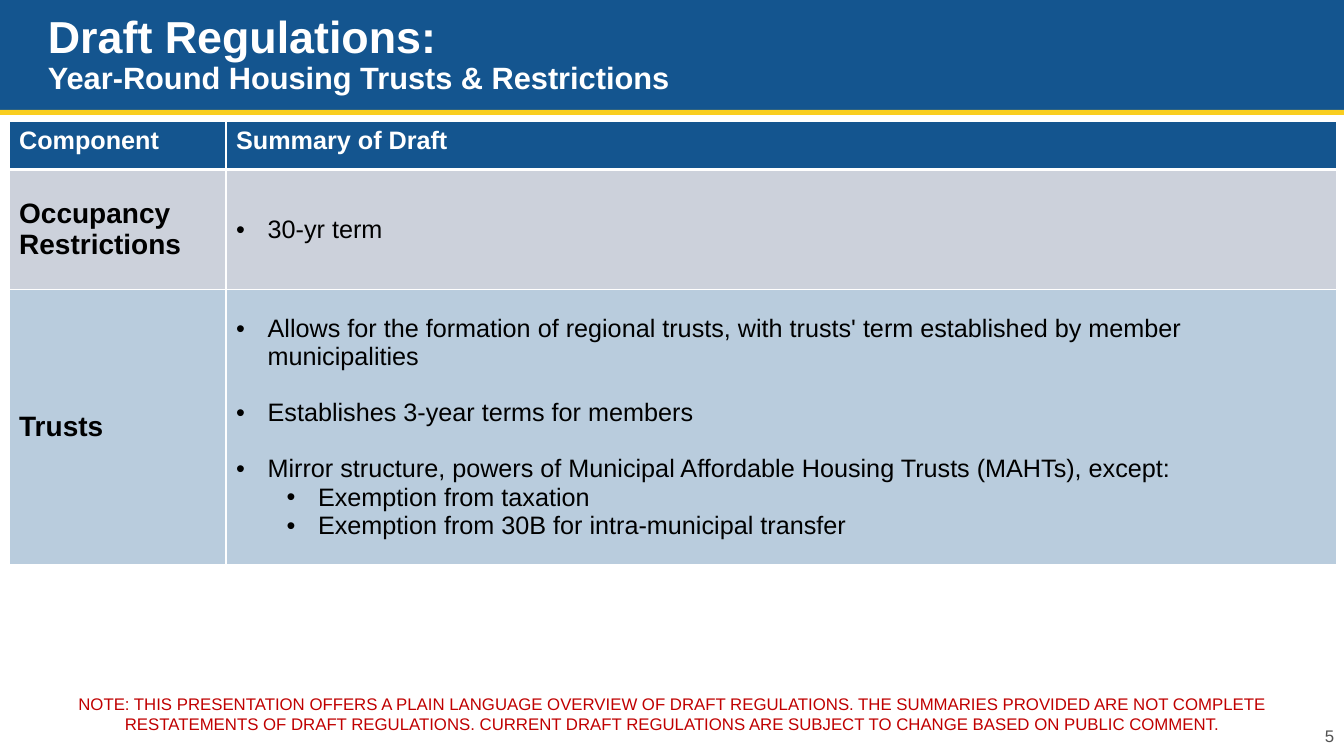
from lxml import etree
from pptx import Presentation
from pptx.dml.color import RGBColor
from pptx.enum.shapes import MSO_SHAPE as Shape
from pptx.enum.text import MSO_ANCHOR as Anchor, PP_ALIGN as Align
from pptx.oxml.ns import qn
from pptx.util import Pt

BLUE = RGBColor(0x14, 0x55, 0x8F)
YELLOW = RGBColor(0xF9, 0xCE, 0x20)
WHITE = RGBColor(0xFF, 0xFF, 0xFF)
BLACK = RGBColor(0x00, 0x00, 0x00)
GREY = RGBColor(0x53, 0x53, 0x53)
RED = RGBColor(0xC0, 0x00, 0x00)
PALE_GREY = RGBColor(0xCC, 0xD1, 0xDB)
PALE_BLUE = RGBColor(0xB9, 0xCC, 0xDD)

WIDTH, HEIGHT = 960, 540
BAND_HEIGHT = 79
COLUMN_WIDTHS = (155, 793)
ROW_HEIGHTS = (34, 86, 196)
HEADINGS = ("Component", "Summary of Draft")

# Each summary line: text, level, space before
COMPONENTS = [
    ("Occupancy Restrictions", PALE_GREY, [("30-yr term", 0, 0)]),
    ("Trusts", PALE_BLUE, [
        ("Allows for the formation of regional trusts, with trusts' term "
         "established by member municipalities", 0, 0),
        ("Establishes 3-year terms for members", 0, 20),
        ("Mirror structure, powers of Municipal Affordable Housing Trusts "
         "(MAHTs), except:", 0, 20),
        ("Exemption from taxation", 1, 0),
        ("Exemption from 30B for intra-municipal transfer", 1, 0),
    ]),
]
NOTE = ("NOTE: THIS PRESENTATION OFFERS A PLAIN LANGUAGE OVERVIEW OF DRAFT "
        "REGULATIONS. THE SUMMARIES PROVIDED ARE NOT COMPLETE RESTATEMENTS OF "
        "DRAFT REGULATIONS. CURRENT DRAFT REGULATIONS ARE SUBJECT TO CHANGE "
        "BASED ON PUBLIC COMMENT.")


class SlideBuilder:
    """Holds the slide and its shared style."""

    font_name = "Arial"
    bullet_indent = 22.5
    level_indent = 36

    def __init__(self, slide):
        self.slide = slide

    def style(self, font, size, color, bold=False):
        font.name = self.font_name
        font.size = Pt(size)
        font.bold = bold
        font.color.rgb = color

    def band(self, top, height, color):
        band = self.slide.shapes.add_shape(
            Shape.RECTANGLE, 0, Pt(top), Pt(WIDTH), Pt(height))
        band.shadow.inherit = False
        band.fill.solid()
        band.fill.fore_color.rgb = color
        band.line.fill.background()

    def title(self, heading, subheading, left, width):
        title = self.slide.shapes.title
        title.left, title.top = Pt(left), Pt(0)
        title.width, title.height = Pt(width), Pt(BAND_HEIGHT)
        # Bring the title in front of the bands
        self.slide.shapes._spTree.append(title._element)
        frame = title.text_frame
        frame.vertical_anchor = Anchor.MIDDLE
        frame.text = f"{heading}\v{subheading}"
        paragraph = frame.paragraphs[0]
        paragraph.alignment = Align.LEFT
        paragraph.line_spacing = 0.9
        for run, size in zip(paragraph.runs, (32, 22)):
            self.style(run.font, size, WHITE, bold=True)

    def text(self, content, left, top, width, height, color, align):
        box = self.slide.shapes.add_textbox(
            Pt(left), Pt(top), Pt(width), Pt(height))
        frame = box.text_frame
        frame.word_wrap = True
        frame.vertical_anchor = Anchor.MIDDLE
        frame.text = content
        paragraph = frame.paragraphs[0]
        paragraph.alignment = align
        self.style(paragraph.runs[0].font, 12, color)

    def table(self, left, top, widths, heights):
        table = self.slide.shapes.add_table(
            len(heights), len(widths), Pt(left), Pt(top),
            Pt(sum(widths)), Pt(sum(heights))).table
        for column, width in zip(table.columns, widths):
            column.width = Pt(width)
        for row, height in zip(table.rows, heights):
            row.height = Pt(height)
        return table

    def cell(self, cell, lines, fill, size, color=BLACK, bold=False,
             anchor=Anchor.MIDDLE, bulleted=False, top_line=1, bottom_line=1):
        for side, line in (("L", 1), ("R", 1), ("T", top_line), ("B", bottom_line)):
            self.border(cell, side, line)
        cell.fill.solid()
        cell.fill.fore_color.rgb = fill
        cell.vertical_anchor = anchor
        frame = cell.text_frame
        frame.text = "\n".join(content for content, _, _ in lines)
        for paragraph, (_, level, gap) in zip(frame.paragraphs, lines):
            if bulleted:
                self.bullet(paragraph, level)
            if gap:
                paragraph.space_before = Pt(gap)
            self.style(paragraph.runs[0].font, size, color, bold)

    def border(self, cell, side, width):
        line = etree.SubElement(
            cell._tc.get_or_add_tcPr(), qn(f"a:ln{side}"), w=str(Pt(width)))
        fill = etree.SubElement(line, qn("a:solidFill"))
        etree.SubElement(fill, qn("a:srgbClr"), val=str(WHITE))

    def bullet(self, paragraph, level):
        paragraph.level = level
        properties = paragraph._p.get_or_add_pPr()
        margin = self.bullet_indent + level * self.level_indent
        properties.set("marL", str(Pt(margin)))
        properties.set("indent", str(Pt(-self.bullet_indent)))
        etree.SubElement(properties, qn("a:buFont"), typeface=self.font_name)
        etree.SubElement(properties, qn("a:buChar"), char="•")


def main():
    deck = Presentation()
    deck.slide_width, deck.slide_height = Pt(WIDTH), Pt(HEIGHT)
    builder = SlideBuilder(deck.slides.add_slide(deck.slide_layouts[5]))

    # Header
    builder.band(0, BAND_HEIGHT, BLUE)
    builder.band(78.5, 3.6, YELLOW)
    builder.title("Draft Regulations: ",
                  "Year-Round Housing Trusts & Restrictions", 27, 828)

    # Slide number
    builder.text("5", 744, 511, 216, 29, GREY, Align.RIGHT)

    # Summary table
    summary = builder.table(6.5, 87, COLUMN_WIDTHS, ROW_HEIGHTS)
    for column, heading in enumerate(HEADINGS):
        builder.cell(summary.cell(0, column), [(heading, 0, 0)], BLUE, 18, WHITE,
                     bold=True, anchor=Anchor.TOP, bottom_line=3)
    for row, (component, fill, lines) in enumerate(COMPONENTS, start=1):
        top_line = 3 if row == 1 else 1
        builder.cell(summary.cell(row, 0), [(component, 0, 0)], fill, 20,
                     bold=True, top_line=top_line)
        builder.cell(summary.cell(row, 1), lines, fill, 18,
                     bulleted=True, top_line=top_line)

    # Note
    builder.text(NOTE, 6.5, 480, sum(COLUMN_WIDTHS), 60, RED, Align.CENTER)

    deck.save("out.pptx")


if __name__ == "__main__":
    main()
